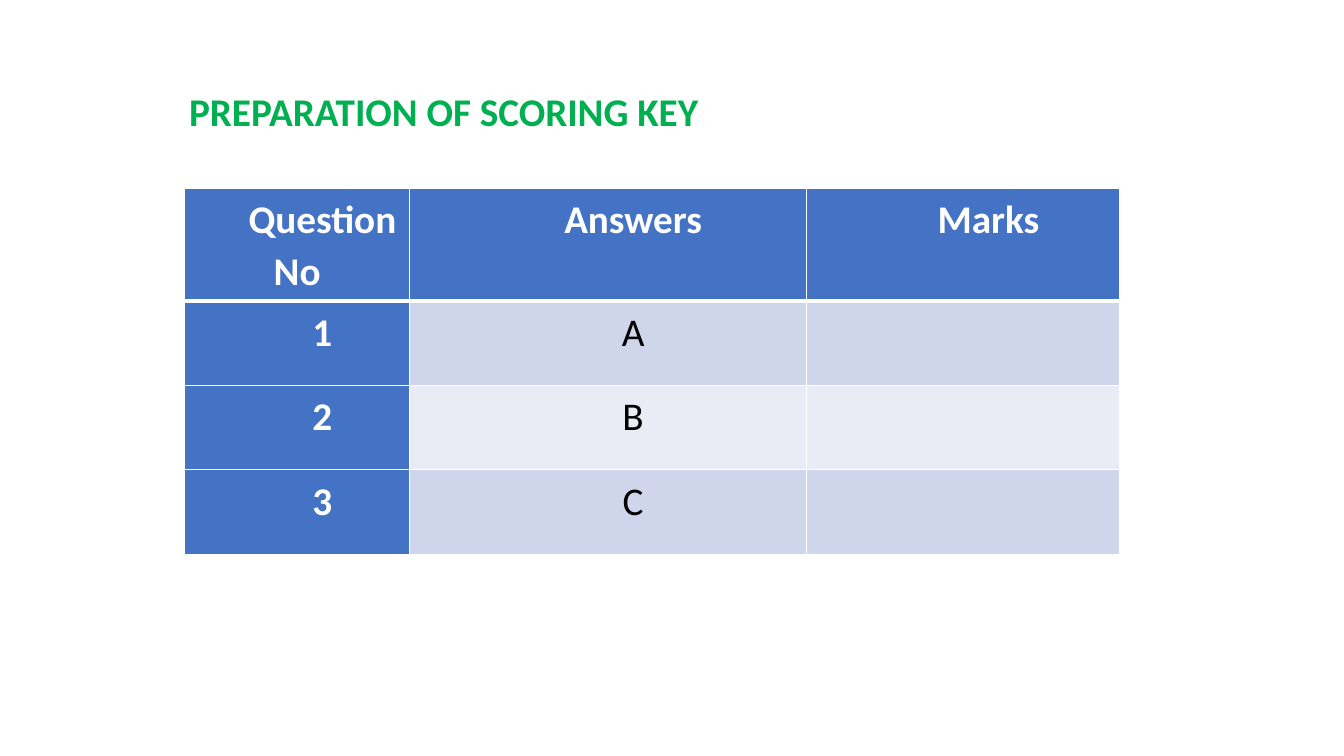
from dataclasses import dataclass

from lxml.etree import SubElement
from pptx import Presentation
from pptx.dml.color import RGBColor
from pptx.enum.text import MSO_ANCHOR, MSO_AUTO_SIZE, PP_ALIGN
from pptx.oxml.ns import qn
from pptx.util import Pt


@dataclass(frozen=True)
class Theme:
    font: str = "Calibri"
    size: int = 28
    title: str = "00B050"
    accent: str = "4472C4"
    light: str = "FFFFFF"
    dark: str = "000000"
    bands: tuple = ("CFD5EA", "E9EBF5")
    indent: int = 36
    rule: int = 1
    header_rule: int = 3


class SlideBuilder:
    def __init__(self, slide, theme):
        self.slide = slide
        self.theme = theme

    def add_span(self, para, text, color, bold):
        para._p.get_or_add_pPr().set("indent", str(Pt(self.theme.indent)))
        span = para.add_run()
        span.text = text
        span.font.name = self.theme.font
        span.font.size = Pt(self.theme.size)
        span.font.bold = bold
        span.font.color.rgb = RGBColor.from_string(color)

    def add_title(self, text, left, top, width, height):
        box = self.slide.shapes.add_textbox(Pt(left), Pt(top), Pt(width), Pt(height))
        frame = box.text_frame
        frame.word_wrap = False
        frame.auto_size = MSO_AUTO_SIZE.SHAPE_TO_FIT_TEXT
        frame.vertical_anchor = MSO_ANCHOR.MIDDLE
        self.add_span(frame.paragraphs[0], text, self.theme.title, True)

    def set_borders(self, cell, top, bottom):
        side = self.theme.rule
        properties = cell._tc.get_or_add_tcPr()
        for tag, width in (("lnL", side), ("lnR", side), ("lnT", top), ("lnB", bottom)):
            line = SubElement(properties, qn(f"a:{tag}"), w=str(Pt(width)))
            fill = SubElement(line, qn("a:solidFill"))
            SubElement(fill, qn("a:srgbClr"), val=self.theme.light)

    def style_cell(self, cell, text, row, column):
        theme = self.theme
        heading = row == 0 or column == 0
        self.set_borders(
            cell,
            theme.header_rule if row == 1 else theme.rule,
            theme.header_rule if row == 0 else theme.rule,
        )
        fill = theme.accent if heading else theme.bands[(row - 1) % 2]
        cell.fill.solid()
        cell.fill.fore_color.rgb = RGBColor.from_string(fill)
        if text:
            para = cell.text_frame.paragraphs[0]
            para.alignment = PP_ALIGN.CENTER
            para.line_spacing = 1.07
            para.space_after = Pt(8)
            self.add_span(para, text, theme.light if heading else theme.dark, heading)

    def add_table(self, rows, left, top, widths, heights):
        frame = self.slide.shapes.add_table(
            len(rows), len(widths), Pt(left), Pt(top), Pt(sum(widths)), Pt(sum(heights))
        )
        table = frame.table
        table.first_col = True
        for column, width in zip(table.columns, widths):
            column.width = Pt(width)
        for row, height in zip(table.rows, heights):
            row.height = Pt(height)
        for row, texts in enumerate(rows):
            for column, text in enumerate(texts):
                self.style_cell(table.cell(row, column), text, row, column)


def main():
    deck = Presentation()
    deck.slide_width = Pt(960)
    deck.slide_height = Pt(540)
    page = SlideBuilder(deck.slides.add_slide(deck.slide_layouts[6]), Theme())

    answers = [(str(number), letter, "") for number, letter in enumerate("ABC", 1)]
    page.add_table(
        [("Question No", "Answers", "Marks"), *answers],
        left=132,
        top=134.5,
        widths=(160.5, 283.5, 224),
        heights=(78.5, *[60.3] * len(answers)),
    )
    page.add_title("PREPARATION OF SCORING KEY", left=92, top=58.5, width=419, height=41)
    deck.save("out.pptx")


if __name__ == "__main__":
    main()
